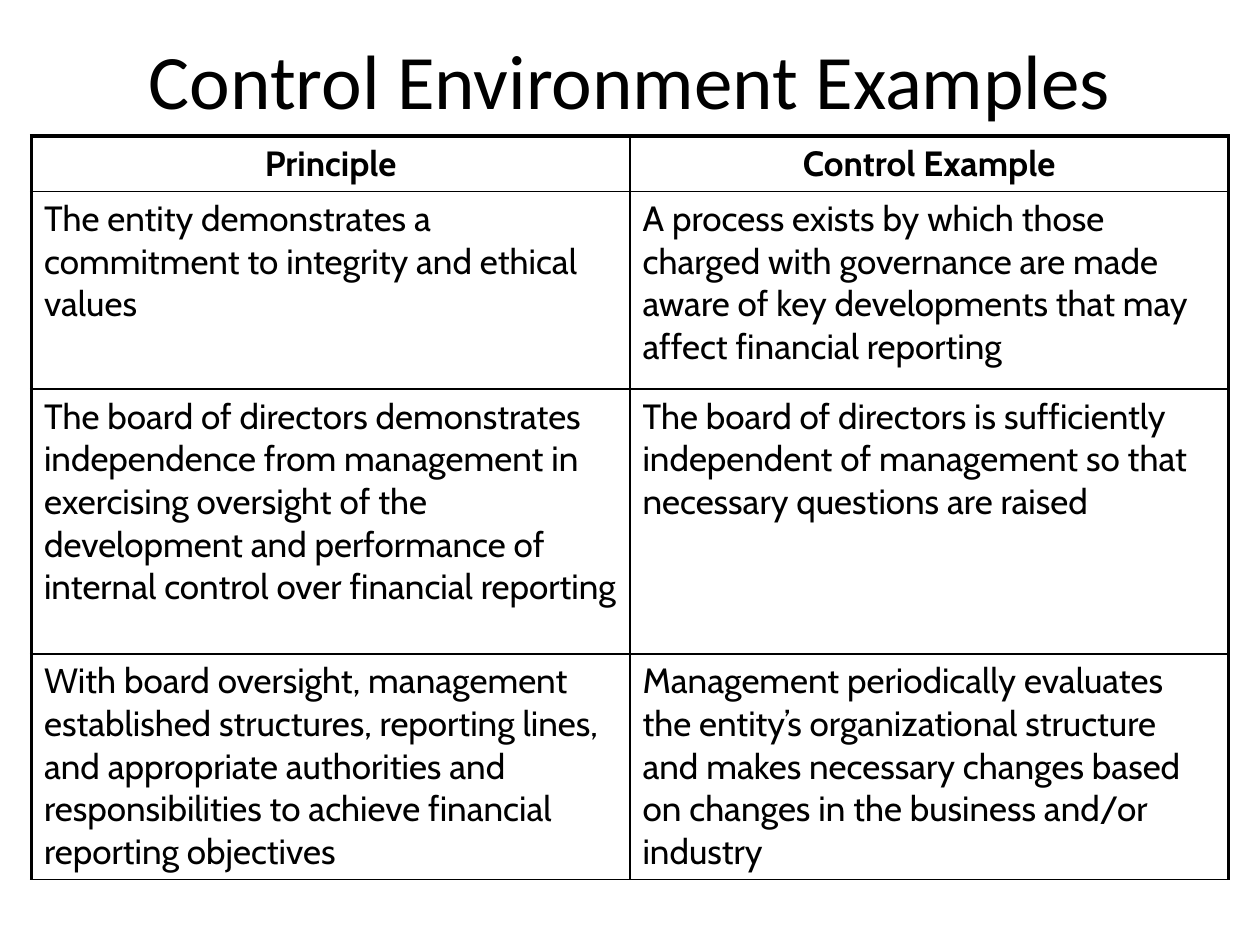
from dataclasses import dataclass

from lxml import etree
from pptx import Presentation
from pptx import util as u
from pptx.dml.color import RGBColor
from pptx.enum import text
from pptx.oxml.ns import qn


@dataclass(frozen=True)
class Theme:
    """Colours, fonts, type sizes and line widths."""
    ink: str = "000000"
    head: str = "Calibri"
    body: str = "Cabin"
    big: int = 44
    size: int = 20
    thick: float = 2.25
    thin: float = 1


LOOK = Theme()
WIDE, HIGH = u.Inches(10), u.Inches(7.5)
ROWS = [0.43, 1.57, 2.1, 1.77]
CELLS = [
    ("Principle", "Control Example"),
    ("The entity demonstrates a commitment to integrity and ethical values",
     "A process exists by which those charged with governance are made aware "
     "of key developments that may affect financial reporting"),
    ("The board of directors demonstrates independence from management in "
     "exercising oversight of the development and performance of internal "
     "control over financial reporting",
     "The board of directors is sufficiently independent of management so "
     "that necessary questions are raised"),
    ("With board oversight, management established structures, reporting "
     "lines, and appropriate authorities and responsibilities to achieve "
     "financial reporting objectives",
     "Management periodically evaluates the entity’s organizational structure "
     "and makes necessary changes based on changes in the business and/or "
     "industry"),
]


def write(frame, words, font, size, bold=False, mid=False):
    """Fill a text frame with one formatted paragraph."""
    frame.text = words
    para = frame.paragraphs[0]
    para.alignment = text.PP_ALIGN.CENTER if mid else text.PP_ALIGN.LEFT
    for run in para.runs:
        run.font.name, run.font.size = font, u.Pt(size)
        run.font.bold = bold
        run.font.color.rgb = RGBColor.from_string(LOOK.ink)


def edge(cell, widths):
    """Draw the left, right, top and bottom borders of a cell."""
    props = cell._tc.get_or_add_tcPr()
    for spot, (side, width) in enumerate(zip("LRTB", widths)):
        line = etree.Element(qn(f"a:ln{side}"), w=str(u.Pt(width)))
        fill = etree.SubElement(line, qn("a:solidFill"))
        etree.SubElement(fill, qn("a:srgbClr"), val=LOOK.ink)
        props.insert(spot, line)


def title(slide, words):
    """Place and format the title."""
    box = slide.shapes.title
    box.left, box.top = int(WIDE * 0.05), 0
    box.width, box.height = int(WIDE * 0.9), HIGH // 6
    box.text_frame.vertical_anchor = text.MSO_ANCHOR.MIDDLE
    write(box.text_frame, words, LOOK.head, LOOK.big, mid=True)


def grid(slide, cells, rows):
    """Add the table with heavier outer borders on three sides."""
    last = len(cells[0]) - 1
    frame = slide.shapes.add_table(
        len(cells), last + 1, u.Inches(0.25), u.Inches(1.08),
        int(WIDE * 0.95), u.Inches(sum(rows)))
    table = frame.table
    table.first_row = table.horz_banding = False
    for r, (high, line) in enumerate(zip(rows, cells)):
        table.rows[r].height = u.Inches(high)
        for c, words in enumerate(line):
            cell = table.cell(r, c)
            cell.fill.background()
            write(cell.text_frame, words, LOOK.body, LOOK.size,
                  bold=r == 0, mid=r == 0)
            outer = (c == 0, c == last, r == 0, False)
            edge(cell, [LOOK.thick if out else LOOK.thin for out in outer])


def main():
    """Build and save the slide."""
    deck = Presentation()
    deck.slide_width, deck.slide_height = WIDE, HIGH
    slide = deck.slides.add_slide(deck.slide_layouts.get_by_name("Title Only"))
    title(slide, "Control Environment Examples")
    grid(slide, CELLS, ROWS)
    deck.save("out.pptx")


if __name__ == "__main__":
    main()
